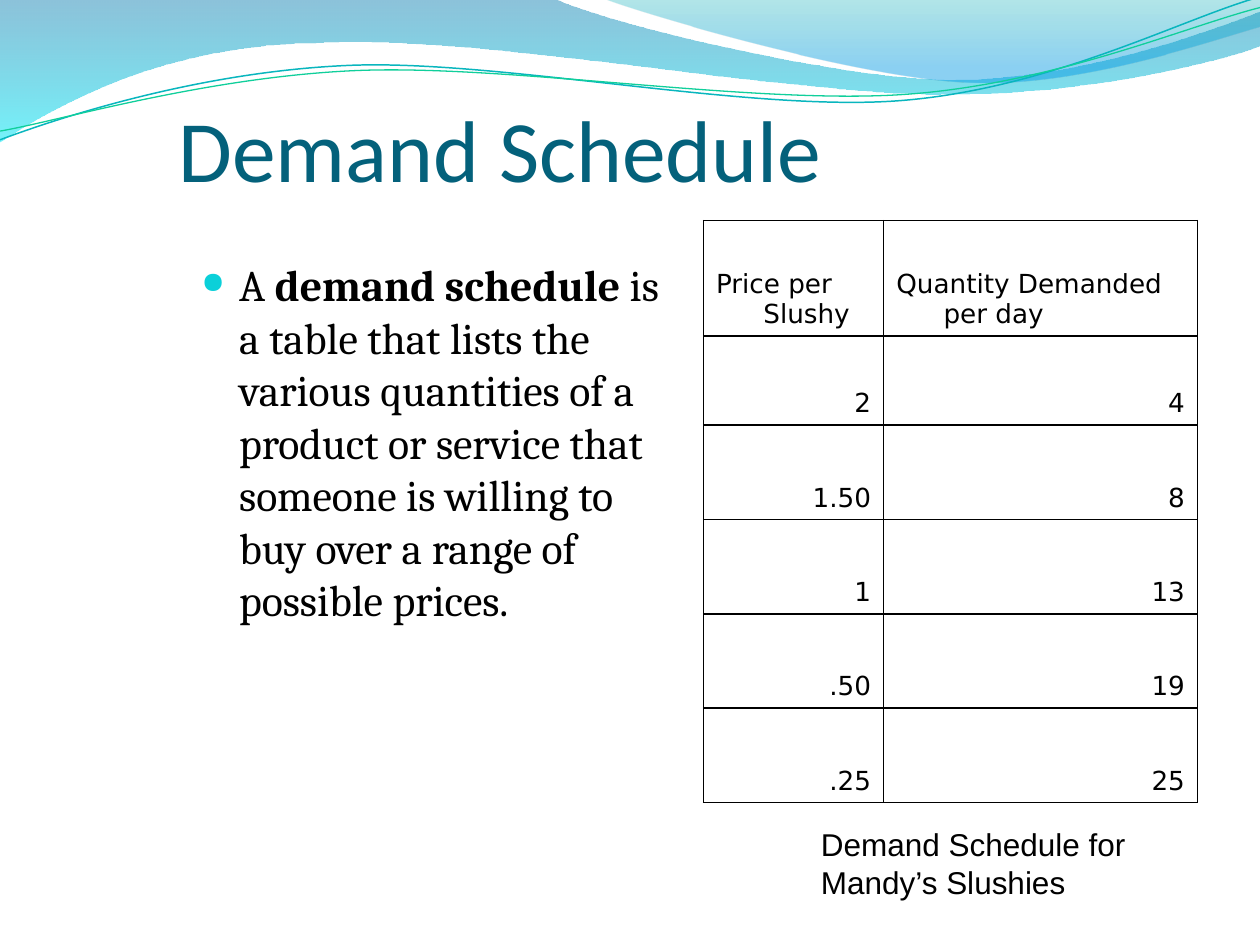
"""Build the Demand Schedule slide: title, definition, price table and caption."""
from dataclasses import dataclass

from lxml import etree
from pptx import Presentation
from pptx.dml.color import RGBColor
from pptx.enum import text
from pptx.oxml import ns, parse_xml
from pptx.util import Pt

TITLE = "Demand Schedule"
DEFINITION = [
    ("A ", False),
    ("demand schedule", True),
    (" is a table that lists the various quantities of a product or service that "
     "someone is willing to buy over a range of possible prices.", False),
]
ROWS = [
    ("Price per Slushy", "Quantity Demanded per day"),
    ("2", "4"),
    ("1.50", "8"),
    ("1", "13"),
    (".50", "19"),
    (".25", "25"),
]
CAPTION = "Demand Schedule for Mandy’s Slushies"

COL_WIDTHS = (103, 179.3)
ROW_HEIGHTS = (66, 51, 53.9, 53.9, 53.9, 53.9)

BANDS = [
    ([(0, "0079AD", 45), (100, "00E9F7", 55)],
     [(0, -0.7), (316.8, -0.7),
      (342.7, 12.2, 478.1, 45.4, 545.8, 45.4),
      (614.2, 45.4, 689.8, 18.7, 720, 6.5),
      (720.7, 25.9),
      (707.8, 31.7, 626.4, 54.7, 537.1, 54),
      (447.8, 54, 275, 20.2, 185, 24.5),
      (92.9, 25.2, 33.1, 59.8, -0.7, 81.4)]),
    ([(0, "00ABB4", 30), (80, "0099E4", 45), (100, "0099E4", 45)],
     [(344.9, -0.7),
      (366.5, 7.9, 491, 44.6, 553.7, 46.8),
      (616.3, 49.7, 691.9, 23, 720, 15.1),
      (720, 0)]),
]
WAVES = [
    ("09B6BE", 0.85,
     [(0, 79.9),
      (34.6, 67, 113.8, 41, 199.4, 37.4),
      (284.4, 33.8, 427, 64.1, 513.4, 57.6),
      (599.8, 51.1, 675.4, 10.8, 718.6, -1.4)]),
    ("10CF9B", 0.75,
     [(0, 74.9),
      (33.8, 69.1, 118.1, 43.9, 203.8, 40.3),
      (290.2, 36.7, 429.8, 59.8, 516.2, 54),
      (601.9, 48.2, 677.5, 15.1, 720, 4.3)]),
]


@dataclass(frozen=True)
class Theme:
    title: tuple = ("Calibri", 50, "04617B")
    body: tuple = ("Cambria", 25, "000000")
    table: tuple = ("DejaVu Sans", 15, "000000")
    caption: tuple = ("Arial", 18, "000000")
    bullet: str = "0BD0D9"
    border: str = "000000"


THEME = Theme()


def add_outline(shapes, segments, close):
    anchors = [(Pt(seg[-2]), Pt(seg[-1])) for seg in segments]
    builder = shapes.build_freeform(*anchors[0])
    builder.add_line_segments(anchors[1:], close=close)
    sp = builder.convert_to_shape()
    sp.shadow.inherit = False
    lines = list(sp._element.iter(ns.qn("a:lnTo")))
    for line, seg in zip(lines, segments[1:]):
        if len(seg) == 6:
            curve = etree.Element(ns.qn("a:cubicBezTo"))
            for x, y in zip(seg[::2], seg[1::2]):
                etree.SubElement(curve, ns.qn("a:pt"),
                                 x=str(Pt(x) - sp.left), y=str(Pt(y) - sp.top))
            line.getparent().replace(line, curve)
    return sp


def add_band(shapes, stops, segments):
    sp = add_outline(shapes, segments, True)
    sp.line.fill.background()
    sp.fill.gradient()
    grad = sp._element.spPr.find(ns.qn("a:gradFill"))
    stop_xml = "".join(
        f'<a:gs pos="{pos * 1000}"><a:srgbClr val="{color}">'
        f'<a:alpha val="{alpha * 1000}"/></a:srgbClr></a:gs>' for pos, color, alpha in stops)
    grad.getparent().replace(grad, parse_xml(
        f'<a:gradFill {ns.nsdecls("a")} rotWithShape="1"><a:gsLst>{stop_xml}</a:gsLst>'
        '<a:lin ang="5400000" scaled="0"/></a:gradFill>'))


def add_wave(shapes, color, width, segments):
    sp = add_outline(shapes, segments, False)
    sp.fill.background()
    sp.line.color.rgb = RGBColor.from_string(color)
    sp.line.width = Pt(width)


def style(p, look):
    name, size, color = look
    for r in p.runs:
        r.font.name = name
        r.font.size = Pt(size)
        r.font.color.rgb = RGBColor.from_string(color)


def hang(p, indent):
    pPr = p._p.get_or_add_pPr()
    pPr.set("marL", str(Pt(indent)))
    pPr.set("indent", str(-Pt(indent)))
    return pPr


def add_text(shapes, box, runs, look):
    tf = shapes.add_textbox(*map(Pt, box)).text_frame
    tf.word_wrap = True
    p = tf.paragraphs[0]
    for words, bold in runs:
        r = p.add_run()
        r.text = words
        r.font.bold = bold
    style(p, look)
    return tf


def add_title(shapes):
    tf = add_text(shapes, (102, 24, 576, 90), [(TITLE, False)], THEME.title)
    tf.vertical_anchor = text.MSO_ANCHOR.BOTTOM
    tf.margin_left = tf.margin_right = tf.margin_bottom = 0


def add_definition(shapes):
    tf = add_text(shapes, (108, 144, 282, 324), DEFINITION, THEME.body)
    pPr = hang(tf.paragraphs[0], 21.6)
    color = etree.SubElement(pPr, ns.qn("a:buClr"))
    etree.SubElement(color, ns.qn("a:srgbClr"), val=THEME.bullet)
    etree.SubElement(pPr, ns.qn("a:buSzPct"), val="68000")
    etree.SubElement(pPr, ns.qn("a:buChar"), char="●")


def add_borders(cell):
    tcPr = cell._tc.get_or_add_tcPr()
    for side in ("lnL", "lnR", "lnT", "lnB"):
        tcPr.append(parse_xml(
            f'<a:{side} {ns.nsdecls("a")} w="{Pt(1)}"><a:solidFill>'
            f'<a:srgbClr val="{THEME.border}"/></a:solidFill></a:{side}>'))


def add_schedule(shapes, left, top):
    table = shapes.add_table(
        len(ROWS), len(COL_WIDTHS), Pt(left), Pt(top),
        Pt(sum(COL_WIDTHS)), Pt(sum(ROW_HEIGHTS))).table
    table.first_row = table.horz_banding = False
    for col, width in zip(table.columns, COL_WIDTHS):
        col.width = Pt(width)
    for i, (row, height) in enumerate(zip(table.rows, ROW_HEIGHTS)):
        row.height = Pt(height)
        for cell, words in zip(row.cells, ROWS[i]):
            add_borders(cell)
            cell.fill.background()
            cell.vertical_anchor = text.MSO_ANCHOR.BOTTOM
            p = cell.text_frame.paragraphs[0]
            p.text = words
            p.alignment = text.PP_ALIGN.RIGHT if i else text.PP_ALIGN.LEFT
            hang(p, 27)
            style(p, THEME.table)


def main():
    prs = Presentation()
    prs.slide_width, prs.slide_height = Pt(720), Pt(540)
    shapes = prs.slides.add_slide(prs.slide_layouts[6]).shapes
    for band in BANDS:
        add_band(shapes, *band)
    for wave in WAVES:
        add_wave(shapes, *wave)
    add_title(shapes)
    add_definition(shapes)
    add_schedule(shapes, 402, 126)
    add_text(shapes, (462, 468, 192, 50.4), [(CAPTION, False)], THEME.caption)
    prs.save("out.pptx")


if __name__ == "__main__":
    main()
